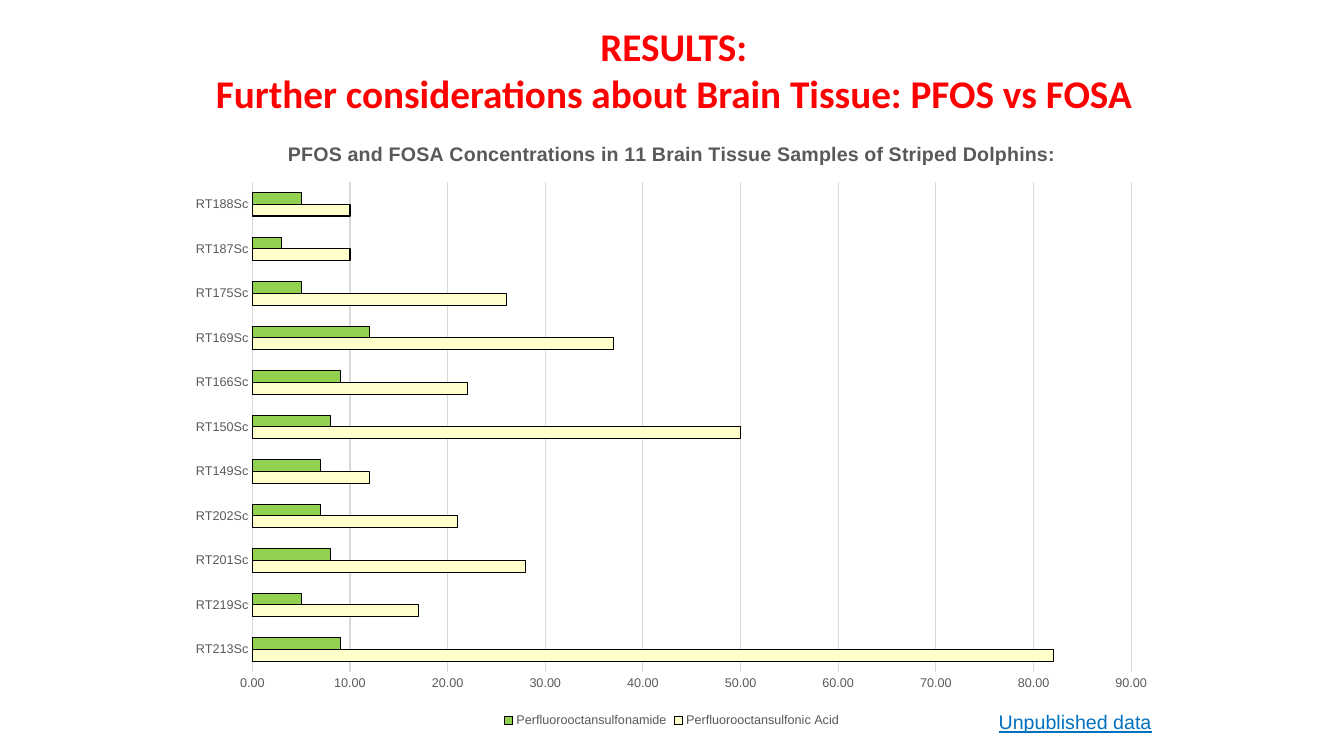
from dataclasses import dataclass

from lxml import etree
from pptx import Presentation
from pptx.chart.data import CategoryChartData
from pptx.dml.color import RGBColor
from pptx.enum.chart import XL_CHART_TYPE, XL_LEGEND_POSITION, XL_TICK_MARK
from pptx.enum.text import MSO_ANCHOR, MSO_AUTO_SIZE, PP_ALIGN
from pptx.oxml.ns import qn
from pptx.util import Cm, Pt

BAR_CLUSTERED = XL_CHART_TYPE.BAR_CLUSTERED
LEGEND_BOTTOM = XL_LEGEND_POSITION.BOTTOM
NO_TICK = XL_TICK_MARK.NONE
TOP = MSO_ANCHOR.TOP
NO_AUTOFIT = MSO_AUTO_SIZE.NONE
CENTER = PP_ALIGN.CENTER
TITLE_ONLY = 5

SAMPLES = ["RT213Sc", "RT219Sc", "RT201Sc", "RT202Sc", "RT149Sc", "RT150Sc",
           "RT166Sc", "RT169Sc", "RT175Sc", "RT187Sc", "RT188Sc"]
PFOS = [82, 17, 28, 21, 12, 50, 22, 37, 26, 10, 10]
FOSA = [9, 5, 8, 7, 7, 8, 9, 12, 5, 3, 5]
CHART_AREA = (4.45, 3.02, 24.97, 15.42)
PLOT_AREA = (6.36, 4.59, 22.15, 12.34)


@dataclass(frozen=True)
class Theme:
    """Colours, fonts and type sizes of the slide."""
    heading: str = "FF0000"
    label: str = "595959"
    grid: str = "D9D9D9"
    outline: str = "000000"
    pfos: str = "FFFFCC"
    fosa: str = "92D050"
    note: str = "0070C0"
    heading_font: str = "Calibri"
    body_font: str = "Arial"
    heading_size: int = 28
    body_size: int = 14
    label_size: int = 9
    line_width: float = 0.75


class SlideBuilder:
    """Places styled elements on the current slide."""

    def __init__(self, deck, theme):
        """Add a title-only slide and keep its style."""
        self.theme = theme
        self.page = deck.slides.add_slide(deck.slide_layouts[TITLE_ONLY])

    def style_font(self, font, name, size, color, bold=False):
        """Set the face, size, colour and weight of a font."""
        font.name, font.size, font.bold = name, Pt(size), bold
        font.color.rgb = RGBColor.from_string(color)

    def style_line(self, line, color):
        """Set the colour and the common width of a line."""
        line.color.rgb = RGBColor.from_string(color)
        line.width = Pt(self.theme.line_width)

    def style_label(self, font):
        """Apply the small chart label style."""
        self.style_font(font, self.theme.body_font, self.theme.label_size, self.theme.label)

    def title(self, lines, left, top, width, height):
        """Fill the title placeholder with centred lines."""
        box = self.page.shapes.title
        box.left, box.top, box.width, box.height = Cm(left), Cm(top), Cm(width), Cm(height)
        frame = box.text_frame
        frame.word_wrap, frame.auto_size, frame.vertical_anchor = True, NO_AUTOFIT, TOP
        frame.margin_left = frame.margin_right = Cm(0.33)
        frame.margin_top = frame.margin_bottom = Cm(0.33)
        para = frame.paragraphs[0]
        para.alignment = CENTER
        for index, text in enumerate(lines):
            if index:
                para.add_line_break()
            span = para.add_run()
            span.text = text
            self.style_font(span.font, self.theme.heading_font,
                            self.theme.heading_size, self.theme.heading, True)

    def note(self, text, left, top, width, height):
        """Add a centred underlined note."""
        box = self.page.shapes.add_textbox(Cm(left), Cm(top), Cm(width), Cm(height))
        box.text_frame.word_wrap = True
        para = box.text_frame.paragraphs[0]
        para.alignment = CENTER
        span = para.add_run()
        span.text = text
        self.style_font(span.font, self.theme.body_font, self.theme.body_size, self.theme.note)
        span.font.underline = True

    def bar_chart(self, heading, categories, series, chart_area, plot_area):
        """Add a clustered bar chart from (name, values, colour) series."""
        data = CategoryChartData(number_format="0.00")
        data.categories = categories
        for name, values, _ in series:
            data.add_series(name, values)
        chart = self.page.shapes.add_chart(
            BAR_CLUSTERED, *(Cm(length) for length in chart_area), data).chart
        self.style_label(chart.font)
        self.chart_title(chart, heading)
        self.chart_axes(chart)
        self.place_plot(chart, chart_area, plot_area)
        chart.has_legend = True
        chart.legend.position = LEGEND_BOTTOM
        chart.legend.include_in_layout = False
        self.style_label(chart.legend.font)
        plot = chart.plots[0]
        plot.gap_width, plot.overlap, plot.vary_by_categories = 182, 0, False
        for bars, (_, _, color) in zip(plot.series, series):
            bars.format.fill.solid()
            bars.format.fill.fore_color.rgb = RGBColor.from_string(color)
            self.style_line(bars.format.line, self.theme.outline)

    def chart_title(self, chart, text):
        """Write the bold chart heading."""
        chart.has_title = True
        chart.chart_title.include_in_layout = False
        span = chart.chart_title.text_frame.paragraphs[0].add_run()
        span.text = text
        self.style_font(span.font, self.theme.body_font,
                        self.theme.body_size, self.theme.label, True)

    def chart_axes(self, chart):
        """Format both axes and the vertical grid."""
        for axis in (chart.category_axis, chart.value_axis):
            axis.major_tick_mark = axis.minor_tick_mark = NO_TICK
            self.style_label(axis.tick_labels.font)
        self.style_line(chart.category_axis.format.line, self.theme.grid)
        values = chart.value_axis
        values.minimum_scale, values.maximum_scale, values.major_unit = 0, 90, 10
        values.tick_labels.number_format = "0.00"
        values.tick_labels.number_format_is_linked = False
        values.format.line.fill.background()
        values.has_major_gridlines = True
        self.style_line(values.major_gridlines.format.line, self.theme.grid)

    def place_plot(self, chart, chart_area, plot_area):
        """Fix the inner plot area inside the chart area."""
        left, top, width, height = chart_area
        plot_left, plot_top, plot_width, plot_height = plot_area
        area = chart.element.find(".//" + qn("c:plotArea"))
        for layout in area.findall(qn("c:layout")):
            area.remove(layout)
        layout = etree.Element(qn("c:layout"))
        area.insert(0, layout)
        manual = etree.SubElement(layout, qn("c:manualLayout"))
        settings = {"layoutTarget": "inner", "xMode": "edge", "yMode": "edge",
                    "x": (plot_left - left) / width, "y": (plot_top - top) / height,
                    "w": plot_width / width, "h": plot_height / height}
        for name, value in settings.items():
            etree.SubElement(manual, qn("c:" + name)).set("val", str(value))


def main():
    """Build and save the slide."""
    deck = Presentation()
    deck.slide_width, deck.slide_height = Cm(33.87), Cm(19.05)
    theme = Theme()
    slide = SlideBuilder(deck, theme)
    slide.title(["RESULTS:", "Further considerations about Brain Tissue: PFOS vs FOSA"],
                2.97, 0.23, 28.02, 3)
    slide.bar_chart("PFOS and FOSA Concentrations in 11 Brain Tissue Samples of Striped Dolphins:",
                    SAMPLES,
                    [("Perfluorooctansulfonic Acid", PFOS, theme.pfos),
                     ("Perfluorooctansulfonamide", FOSA, theme.fosa)],
                    CHART_AREA, PLOT_AREA)
    slide.note("Unpublished data", 22.18, 17.77, 9.83, 0.86)
    deck.save("out.pptx")


if __name__ == "__main__":
    main()
